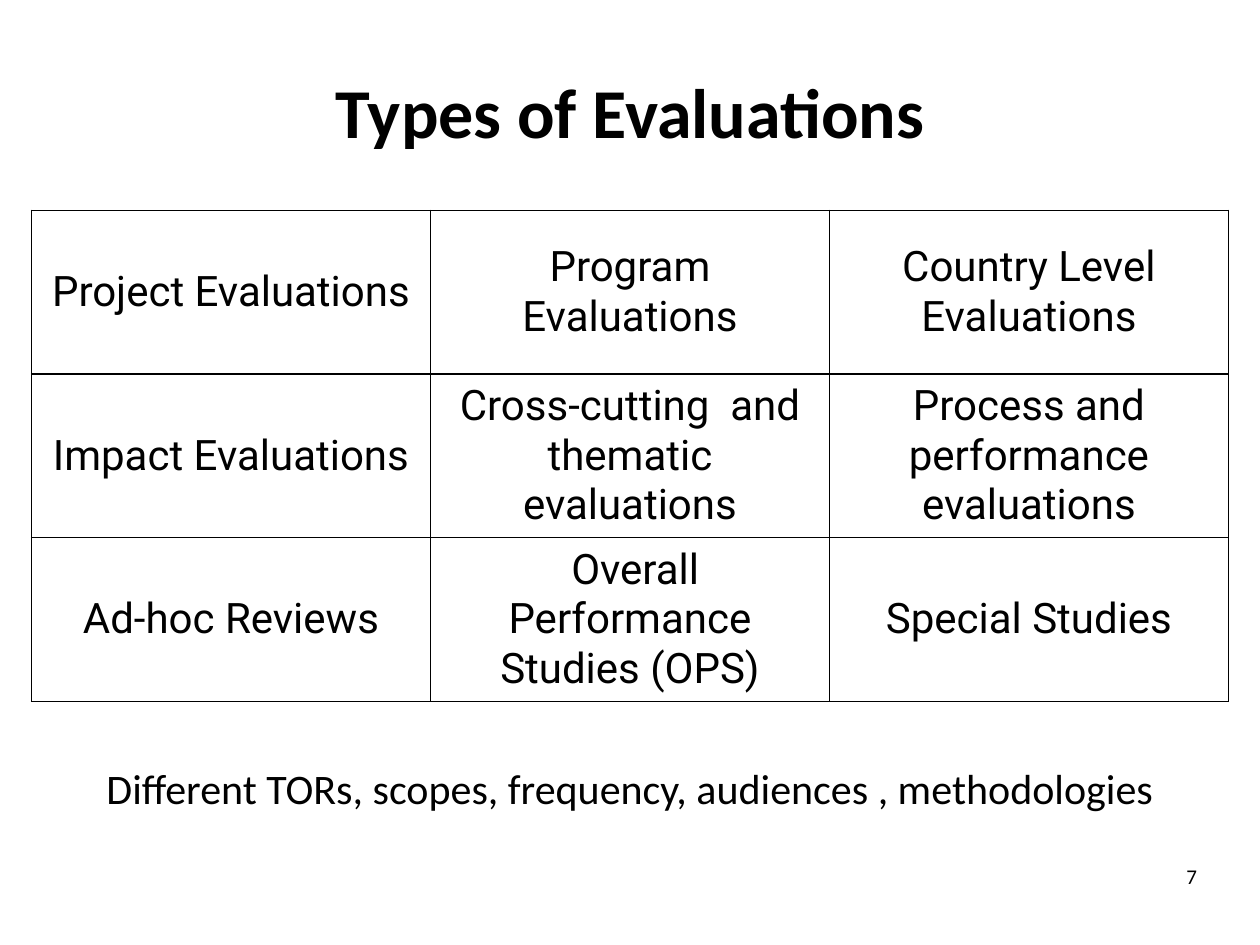
from lxml import etree
from pptx import Presentation, util as u
from pptx.dml.color import RGBColor
from pptx.enum import text as t
from pptx.oxml import ns

SCALE = 9144  # EMU per px, 100 px to the inch
BLACK = RGBColor(0, 0, 0)
WHITE = RGBColor(255, 255, 255)
MID = t.MSO_ANCHOR.MIDDLE
TOP = t.MSO_ANCHOR.TOP
MID_ROW = t.PP_ALIGN.CENTER
RIGHT = t.PP_ALIGN.RIGHT

KINDS = [
    ["Project Evaluations", "Program Evaluations", "Country Level Evaluations"],
    ["Impact Evaluations", "Cross-cutting  and thematic evaluations",
     "Process and performance evaluations"],
    ["Ad-hoc Reviews", " Overall Performance Studies (OPS)", "Special Studies"],
]


def px(n):
    return u.Emu(round(n * SCALE))


def write(frame, words, size, font="Calibri", bold=False, align=MID_ROW):
    para = frame.paragraphs[0]
    para.alignment = align
    run = para.add_run()
    run.text = words
    run.font.name = font
    run.font.size = u.Pt(size)
    run.font.bold = bold
    run.font.color.rgb = BLACK


def add_text(slide, box, words, size, anchor=MID, inset=5, **style):
    frame = slide.shapes.add_textbox(*map(px, box)).text_frame
    frame.word_wrap = True
    frame.vertical_anchor = anchor
    frame.margin_left = frame.margin_right = px(inset)
    frame.margin_top = frame.margin_bottom = px(inset)
    write(frame, words, size, **style)


def add_edges(cell, width=1):
    """Rule all four sides of a cell; call before the cell fill is set."""
    props = cell._tc.get_or_add_tcPr()
    for side in ("lnL", "lnR", "lnT", "lnB"):
        line = etree.SubElement(props, ns.qn(f"a:{side}"), w=str(u.Pt(width)))
        fill = etree.SubElement(line, ns.qn("a:solidFill"))
        etree.SubElement(fill, ns.qn("a:srgbClr"), val=str(BLACK))


def add_grid(slide, box, rows):
    left, top, width, height = box
    count, wide = len(rows), len(rows[0])
    grid = slide.shapes.add_table(count, wide, *map(px, box)).table
    grid.first_row = grid.horz_banding = False
    for col in grid.columns:
        col.width = px(width / wide)
    for row, names in zip(grid.rows, rows):
        row.height = px(height / count)
        for cell, name in zip(row.cells, names):
            add_edges(cell)
            cell.fill.solid()
            cell.fill.fore_color.rgb = WHITE
            cell.vertical_anchor = MID
            cell.margin_left = cell.margin_right = px(5)
            cell.margin_top = cell.margin_bottom = px(5)
            write(cell.text_frame, name, 24, font="Roboto")


def main():
    deck = Presentation()
    deck.slide_width, deck.slide_height = px(1000), px(750)
    slide = deck.slides.add_slide(deck.slide_layouts[6])
    add_text(slide, (25, 25, 950, 125), "Types of Evaluations", 40, bold=True)
    add_grid(slide, (25, 167, 950, 389), KINDS)
    add_text(slide, (25, 600, 950, 49),
             "Different TORs, scopes, frequency, audiences , methodologies",
             24, anchor=TOP)
    add_text(slide, (717, 675, 233, 40), "7", 12, inset=0, align=RIGHT)
    deck.save("out.pptx")


if __name__ == "__main__":
    main()
